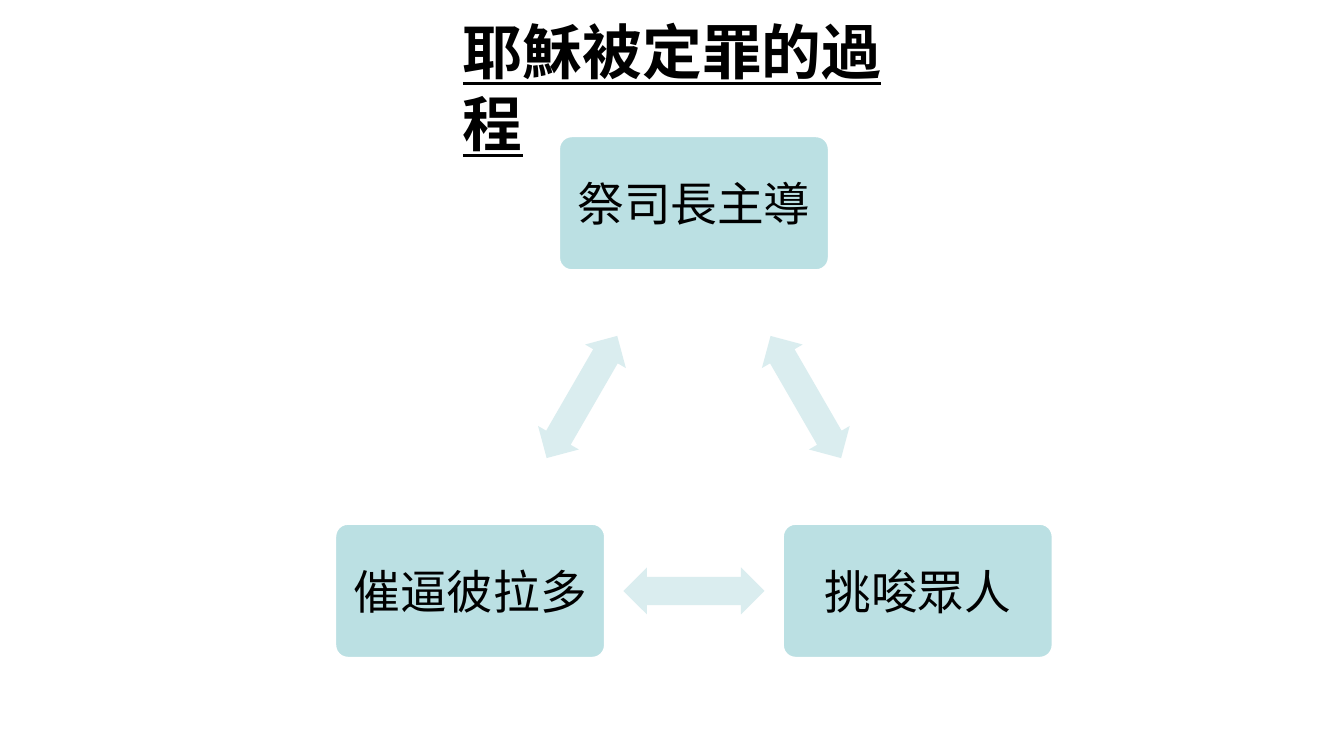
import math

import pptx
import pptx.dml.color
import pptx.enum.shapes
import pptx.enum.text
import pptx.oxml.ns
import pptx.util
from dataclasses import dataclass
from lxml import etree

RGB = pptx.dml.color.RGBColor
SHAPE = pptx.enum.shapes.MSO_SHAPE
ANCHOR = pptx.enum.text.MSO_ANCHOR
ALIGN = pptx.enum.text.PP_ALIGN


@dataclass(frozen=True)
class Theme:
    font: str = "Noto Sans CJK TC"
    text: RGB = RGB(0x00, 0x00, 0x00)
    box: RGB = RGB(0xBB, 0xE0, 0xE3)
    outline: RGB = RGB(0xFF, 0xFF, 0xFF)
    arrow: RGB = RGB(0xDA, 0xED, 0xEF)
    title_size: float = 32
    box_size: float = 25


THEME = Theme()
WIDTH = pptx.util.Inches(10)
HEIGHT = WIDTH * 9 // 16
COLUMNS = 100  # square grid cells across the slide

TITLE = "耶穌被定罪的過程"
STEPS = ["祭司長主導", "挑唆眾人", "催逼彼拉多"]  # clockwise from the top
CENTER, RADIUS = (51.63, 34.35), 19.23
BOX = (20.2, 10.1)
ARROW = (10.5, 3.5)


def grid(cells):
    return round(cells * WIDTH / COLUMNS)


def add_run(p, text, size, bold=None, underline=None):
    r = p.add_run()
    r.text = text
    f = r.font
    f.name, f.size = THEME.font, pptx.util.Pt(size)
    f.bold, f.underline = bold, underline
    f.color.rgb = THEME.text
    ea = etree.SubElement(r._r.get_or_add_rPr(), pptx.oxml.ns.qn("a:ea"))
    ea.set("typeface", THEME.font)


def fill_title(s):
    sp = s.shapes.title
    sp.left, sp.top, sp.width, sp.height = map(grid, (33.45, 0.6, 37.6, 6.4))
    tf = sp.text_frame
    tf.auto_size = pptx.enum.text.MSO_AUTO_SIZE.NONE
    tf.word_wrap = True
    tf.vertical_anchor = ANCHOR.TOP
    p = tf.paragraphs[0]
    p.alignment = ALIGN.LEFT
    add_run(p, TITLE, THEME.title_size, bold=True, underline=True)


def add_centered(s, kind, center, size, color):
    """Add a filled preset shape around a centre point given in grid cells."""
    (x, y), (w, h) = center, size
    sp = s.shapes.add_shape(kind, *map(grid, (x - w / 2, y - h / 2, w, h)))
    sp.shadow.inherit = False
    sp.fill.solid()
    sp.fill.fore_color.rgb = color
    return sp


def add_step(s, center, text):
    sp = add_centered(s, SHAPE.ROUNDED_RECTANGLE, center, BOX, THEME.box)
    sp.adjustments[0] = 0.1
    sp.line.color.rgb = THEME.outline
    sp.line.width = pptx.util.Pt(2)
    tf = sp.text_frame
    tf.word_wrap = True
    tf.vertical_anchor = ANCHOR.MIDDLE
    tf.margin_left = tf.margin_right = grid(0.5)
    p = tf.paragraphs[0]
    p.alignment = ALIGN.CENTER
    add_run(p, text, THEME.box_size)


def add_double_arrow(s, start, end, rotation):
    middle = [(a + b) / 2 for a, b in zip(start, end)]
    sp = add_centered(s, SHAPE.LEFT_RIGHT_ARROW, middle, ARROW, THEME.arrow)
    sp.adjustments[0], sp.adjustments[1] = 0.6, 0.5
    sp.line.fill.background()
    sp.rotation = rotation


def add_cycle(s):
    """Place the steps evenly on a circle, with an arrow between neighbours."""
    n = len(STEPS)
    turn = 360 / n
    angles = [math.radians(turn * i - 90) for i in range(n)]
    points = [(CENTER[0] + RADIUS * math.cos(a), CENTER[1] + RADIUS * math.sin(a))
              for a in angles]
    for i, text in enumerate(STEPS):
        add_step(s, points[i], text)
        add_double_arrow(s, points[i], points[(i + 1) % n], turn * (i + 0.5))


def main():
    prs = pptx.Presentation()
    prs.slide_width, prs.slide_height = WIDTH, HEIGHT
    s = prs.slides.add_slide(prs.slide_layouts.get_by_name("Title Only"))
    fill_title(s)
    add_cycle(s)
    prs.save("out.pptx")


if __name__ == "__main__":
    main()
